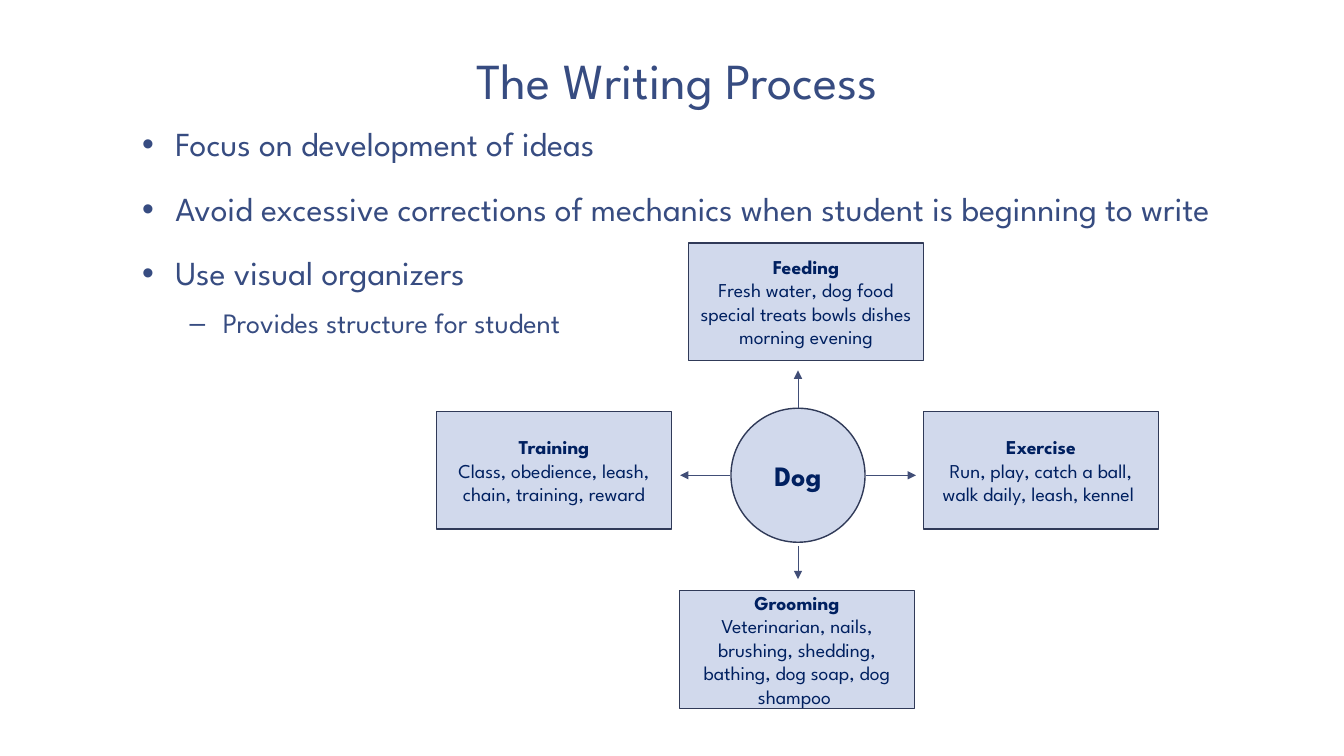
from lxml import etree
from pptx import Presentation
from pptx.dml.color import RGBColor
from pptx.enum import shapes, text
from pptx.oxml.ns import qn
from pptx.util import Inches, Pt

FONT = "League Spartan"
COLORS = {"heading": "374C81", "label": "002060", "fill": "D1D9EC",
          "outline": "303A58", "arrow": "414E77"}
TITLE = "The Writing Process "
BULLETS = [
    (0, "Focus on development of ideas"),
    (0, "Avoid excessive corrections of mechanics when student is beginning to write"),
    (0, "Use visual organizers"),
    (1, "Provides structure for student"),
]
LEVELS = [
    {"mark": "•", "margin": 0.33, "size": 24, "before": 18.7},
    {"mark": "–", "margin": 0.8, "size": 20, "before": 10.7},
]
HANGING = 0.33
TOPICS = [
    (4.33, 4.08, "Training", "Class, obedience, leash, chain, training, reward"),
    (6.83, 2.41, "Feeding", "Fresh water, dog food special treats bowls dishes morning evening"),
    (6.74, 5.86, "Grooming",
     "Veterinarian, nails, brushing, shedding, bathing, dog soap, dog shampoo "),
    (9.16, 4.08, "Exercise", "Run, play, catch a ball, walk daily, leash, kennel "),
]
TOPIC_SIZE = (2.33, 1.17)
HUB_X, HUB_Y, HUB_SIZE = 7.25, 4.05, 1.33
ARROWS = [(0, -1, 0.67, 1.04), (0, 1, 0.7, 1.03), (1, 0, 0.67, 1.17), (-1, 0, 0.67, 1.17)]


def color(name):
    return RGBColor.from_string(COLORS[name])


def style(paragraph, size, color_name, bold=False):
    for run in paragraph.runs:
        run.font.name = FONT
        run.font.size = Pt(size)
        run.font.bold = bold
        run.font.color.rgb = color(color_name)


def set_insets(frame):
    frame.margin_left = frame.margin_right = Inches(0.13)
    frame.margin_top = frame.margin_bottom = Inches(0.07)
    frame.word_wrap = True
    frame.auto_size = text.MSO_AUTO_SIZE.NONE


def add_node(slide, kind, left, top, width, height, lines, size):
    node = slide.shapes.add_shape(kind, Inches(left), Inches(top), Inches(width), Inches(height))
    node.shadow.inherit = False
    node.fill.solid()
    node.fill.fore_color.rgb = color("fill")
    node.line.color.rgb = color("outline")
    node.line.width = Pt(1)
    frame = node.text_frame
    frame.word_wrap = True
    frame.vertical_anchor = text.MSO_ANCHOR.MIDDLE
    frame.text = "\n".join(lines)
    for index, paragraph in enumerate(frame.paragraphs):
        paragraph.alignment = text.PP_ALIGN.CENTER
        style(paragraph, size, "label", bold=index == 0)


def add_arrow(slide, x1, y1, x2, y2):
    arrow = slide.shapes.add_connector(
        shapes.MSO_CONNECTOR.STRAIGHT, Inches(x1), Inches(y1), Inches(x2), Inches(y2))
    arrow.line.color.rgb = color("arrow")
    arrow.line.width = Pt(0.5)
    outline = arrow.line._get_or_add_ln()
    etree.SubElement(outline, qn("a:tailEnd"), type="triangle")
    etree.SubElement(arrow._element.spPr, qn("a:effectLst"))


def add_title(slide):
    title = slide.shapes.title
    title.left, title.top, title.width, title.height = map(Inches, (1.22, 0.08, 11.11, 1.08))
    frame = title.text_frame
    set_insets(frame)
    frame.vertical_anchor = text.MSO_ANCHOR.BOTTOM
    frame.text = TITLE
    paragraph = frame.paragraphs[0]
    paragraph.alignment = text.PP_ALIGN.CENTER
    paragraph.line_spacing = 0.85
    style(paragraph, 36, "heading")


def add_bullets(slide):
    frame = slide.shapes.add_textbox(*map(Inches, (1.28, 1.18, 11.11, 6.15))).text_frame
    set_insets(frame)
    frame.text = "\n".join(line for _, line in BULLETS)
    for index, (paragraph, (depth, _)) in enumerate(zip(frame.paragraphs, BULLETS)):
        level = LEVELS[depth]
        paragraph.level = depth
        paragraph.line_spacing = 0.95
        if index:
            paragraph.space_before = Pt(level["before"])
        properties = paragraph._p.get_or_add_pPr()
        properties.set("marL", str(Inches(level["margin"])))
        properties.set("indent", str(-Inches(HANGING)))
        etree.SubElement(properties, qn("a:buFont"), typeface="Arial")
        etree.SubElement(properties, qn("a:buChar"), char=level["mark"])
        style(paragraph, level["size"], "heading")


def main():
    presentation = Presentation()
    presentation.slide_width = Inches(13.33)
    presentation.slide_height = Inches(7.5)
    slide = presentation.slides.add_slide(presentation.slide_layouts[5])
    add_title(slide)
    add_bullets(slide)
    add_node(slide, shapes.MSO_SHAPE.OVAL, HUB_X, HUB_Y, HUB_SIZE, HUB_SIZE, ["Dog"], 20)
    for left, top, *lines in TOPICS:
        add_node(slide, shapes.MSO_SHAPE.RECTANGLE, left, top, *TOPIC_SIZE, lines, 14)
    center_x, center_y = HUB_X + HUB_SIZE / 2, HUB_Y + HUB_SIZE / 2
    for dx, dy, start, end in ARROWS:
        add_arrow(slide, center_x + dx * start, center_y + dy * start,
                  center_x + dx * end, center_y + dy * end)
    presentation.save("out.pptx")


if __name__ == "__main__":
    main()
